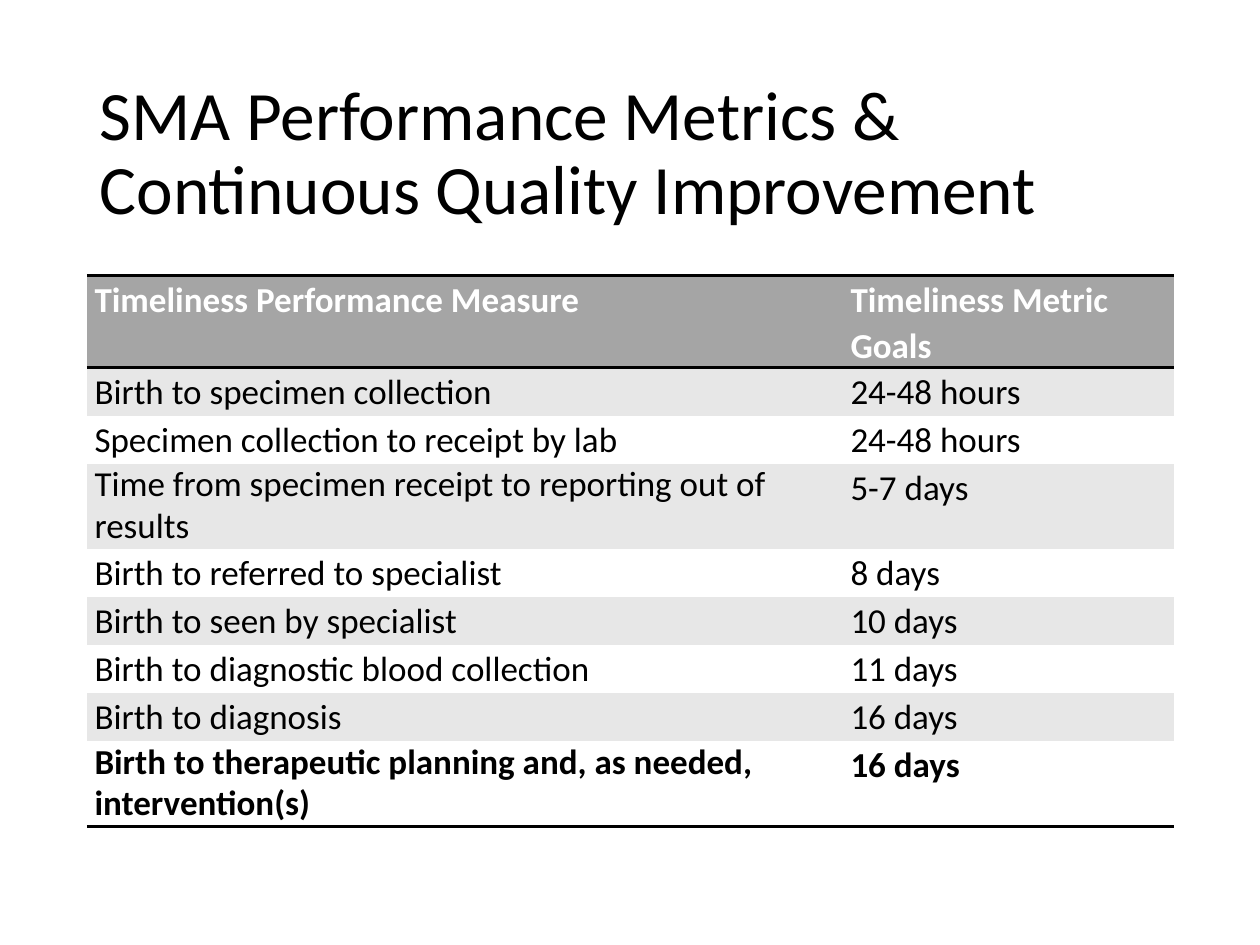
from lxml import etree
from pptx import Presentation
from pptx.dml.color import RGBColor
from pptx.enum.text import MSO_ANCHOR, PP_ALIGN
from pptx.oxml.ns import qn
from pptx.util import Inches, Pt

MIDDLE = MSO_ANCHOR.MIDDLE
LEFT = PP_ALIGN.LEFT
FONT = "Calibri"
COLORS = {"ink": "000000", "header": "A5A5A5", "header_text": "FFFFFF",
          "band": "E7E7E7", "plain": "FFFFFF"}
PLAIN_TABLE_STYLE = "{2D5ABB26-0587-4C30-8999-92F81FD0307C}"

MARGIN = 0.69
COLUMN_WIDTHS = (6, 2.63)
HEADER_HEIGHT, ROW_HEIGHT, TWO_LINE_HEIGHT = 0.73, 0.38, 0.68
TWO_LINE_ROWS = (3, 8)

TITLE = "SMA Performance Metrics & Continuous Quality Improvement"
METRICS = [
    ("Timeliness Performance Measure", "Timeliness Metric Goals"),
    ("Birth to specimen collection", "24-48 hours"),
    ("Specimen collection to receipt by lab", "24-48 hours"),
    ("Time from specimen receipt to reporting out of results", "5-7 days"),
    ("Birth to referred to specialist", "8 days"),
    ("Birth to seen by specialist", "10 days"),
    ("Birth to diagnostic blood collection", "11 days"),
    ("Birth to diagnosis", "16 days"),
    ("Birth to therapeutic planning and, as needed, intervention(s)", "16 days"),
]
LAST_ROW = len(METRICS) - 1


def color(name):
    return RGBColor.from_string(COLORS[name])


def format_runs(paragraph, size, ink, bold=False):
    for run in paragraph.runs:
        run.font.name = FONT
        run.font.size = Pt(size)
        run.font.bold = bold
        run.font.color.rgb = color(ink)


def add_title(slide):
    title = slide.shapes.title
    title.left, title.top = Inches(MARGIN), Inches(0.61)
    title.width, title.height = Inches(8.62), Inches(1.24)
    frame = title.text_frame
    frame.text = TITLE
    frame.word_wrap = True
    frame.vertical_anchor = MIDDLE
    heading = frame.paragraphs[0]
    heading.alignment = LEFT
    heading.line_spacing = 0.9
    format_runs(heading, 39.6, "ink")


def add_rules(cell, sides):
    """Draw black borders; the schema wants them ahead of the cell's fill."""
    properties = cell._tc.get_or_add_tcPr()
    for position, side in enumerate(sides):
        line = etree.Element(qn(f"a:{side}"), w=str(Pt(2)))
        fill = etree.SubElement(line, qn("a:solidFill"))
        etree.SubElement(fill, qn("a:srgbClr"), val=COLORS["ink"])
        properties.insert(position, line)


def fill_cell(cell, text, row, column):
    is_header = row == 0
    cell.margin_left = cell.margin_right = cell.margin_top = cell.margin_bottom = 0
    cell.fill.solid()
    background = "header" if is_header else "band" if row % 2 else "plain"
    cell.fill.fore_color.rgb = color(background)

    cell.text_frame.text = text
    entry = cell.text_frame.paragraphs[0]
    entry._p.get_or_add_pPr().set("marL", str(Inches(0.06)))
    wraps = row in TWO_LINE_ROWS and column == 0
    entry.line_spacing = 0.97 if wraps else 1.07
    entry.space_before = Pt(2.1 if is_header else 6.7 if wraps else 6.5)
    format_runs(entry, 20, "header_text" if is_header else "ink",
                row in (0, LAST_ROW))

    if is_header:
        add_rules(cell, ("lnT", "lnB"))
    elif row == LAST_ROW:
        add_rules(cell, ("lnB",))


def add_metrics_table(slide):
    heights = [HEADER_HEIGHT] + [
        TWO_LINE_HEIGHT if row in TWO_LINE_ROWS else ROW_HEIGHT
        for row in range(1, len(METRICS))]
    table = slide.shapes.add_table(
        len(METRICS), len(COLUMN_WIDTHS), Inches(MARGIN), Inches(2.19),
        Inches(sum(COLUMN_WIDTHS)), Inches(sum(heights))).table
    table.horz_banding = False
    table._tbl.tblPr.find(qn("a:tableStyleId")).text = PLAIN_TABLE_STYLE
    for column, width in zip(table.columns, COLUMN_WIDTHS):
        column.width = Inches(width)
    for row, (height, texts) in enumerate(zip(heights, METRICS)):
        table.rows[row].height = Inches(height)
        for column, text in enumerate(texts):
            fill_cell(table.cell(row, column), text, row, column)


def main():
    deck = Presentation()
    deck.slide_width, deck.slide_height = Inches(10), Inches(7.5)
    title_only = deck.slide_layouts[5]
    slide = deck.slides.add_slide(title_only)
    add_title(slide)
    add_metrics_table(slide)
    deck.save("out.pptx")


if __name__ == "__main__":
    main()
